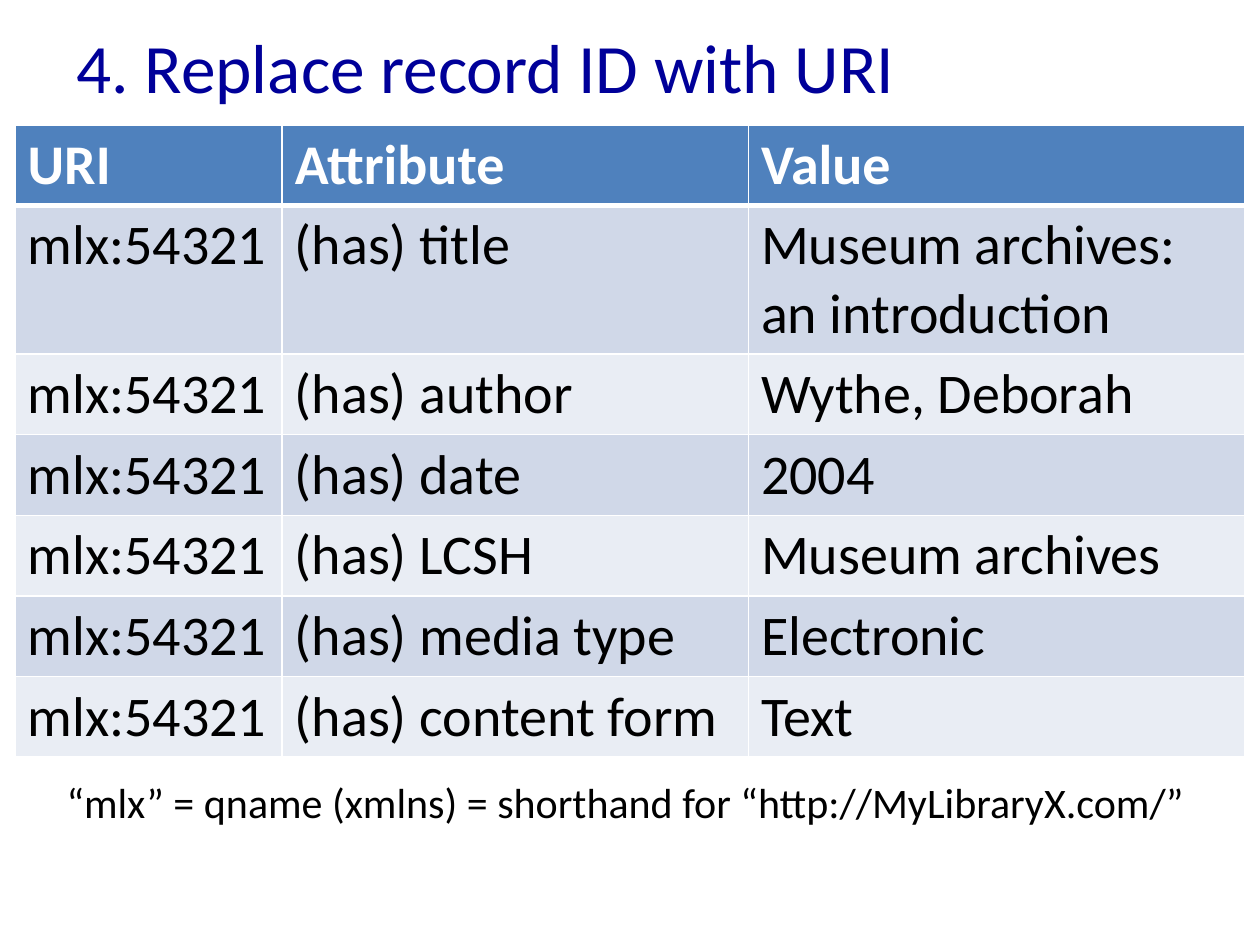
from lxml import etree
from pptx import Presentation
from pptx.dml.color import RGBColor
from pptx.enum.text import MSO_ANCHOR
from pptx.oxml.ns import qn
from pptx.util import Inches, Pt

MIDDLE, TOP = MSO_ANCHOR.MIDDLE, MSO_ANCHOR.TOP
FONT = "Calibri"
COLORS = {"title": "000099", "head": "4F81BD", "odd": "D0D8E8",
          "even": "E9EDF4", "white": "FFFFFF", "black": "000000"}

TITLE = "4. Replace record ID with URI"
NOTE = "“mlx” = qname (xmlns) = shorthand for “http://MyLibraryX.com/”"
HEAD = ("URI", "Attribute", "Value")
URI = "mlx:54321"
FACTS = [
    ("title", "Museum archives: an introduction"),
    ("author", "Wythe, Deborah"),
    ("date", "2004"),
    ("LCSH", "Museum archives"),
    ("media type", "Electronic"),
    ("content form", "Text"),
]
COLS = (2.12, 3.7, 3.94)
ROW, TALL = 0.64, 1.18


def color(name):
    return RGBColor.from_string(COLORS[name])


def style(par, size, name, bold=False):
    font = par.font
    font.name, font.size, font.bold = FONT, Pt(size), bold
    font.color.rgb = color(name)


def add_text(slide, text, box, size, name, anchor, wrap):
    frame = slide.shapes.add_textbox(*map(Inches, box)).text_frame
    frame.word_wrap = wrap
    frame.vertical_anchor = anchor
    frame.text = text
    style(frame.paragraphs[0], size, name)


def add_border(cell, side, width):
    line = etree.SubElement(cell._tc.get_or_add_tcPr(), qn(f"a:ln{side}"),
                            w=str(Pt(width)))
    fill = etree.SubElement(line, qn("a:solidFill"))
    etree.SubElement(fill, qn("a:srgbClr"), val=COLORS["white"])


def add_grid(slide):
    rows = [HEAD] + [(URI, f"(has) {name}", value) for name, value in FACTS]
    highs = [ROW, TALL] + [ROW] * (len(rows) - 2)
    table = slide.shapes.add_table(
        len(rows), len(COLS), Inches(0.12), Inches(0.99),
        Inches(sum(COLS)), Inches(sum(highs))).table
    for col, width in zip(table.columns, COLS):
        col.width = Inches(width)
    for r, (row, high) in enumerate(zip(rows, highs)):
        table.rows[r].height = Inches(high)
        band = "head" if r == 0 else "odd" if r % 2 else "even"
        for c, text in enumerate(row):
            cell = table.cell(r, c)
            cell.text = text
            style(cell.text_frame.paragraphs[0], 32,
                  "black" if r else "white", bold=r == 0)
            # The line under the header is heavier than the rest
            for side in "LRTB":
                heavy = (r, side) in ((0, "B"), (1, "T"))
                add_border(cell, side, 3 if heavy else 1)
            cell.fill.solid()
            cell.fill.fore_color.rgb = color(band)


def main():
    deck = Presentation()
    deck.slide_width, deck.slide_height = Inches(10), Inches(7.5)
    slide = deck.slides.add_slide(deck.slide_layouts[6])

    # Title, table, note
    add_text(slide, TITLE, (0.51, 0.13, 9, 0.79), 39.6, "title", MIDDLE, True)
    add_grid(slide)
    add_text(slide, NOTE, (0.43, 6.11, 9.23, 0.5), 24, "black", TOP, False)

    deck.save("out.pptx")


if __name__ == "__main__":
    main()
